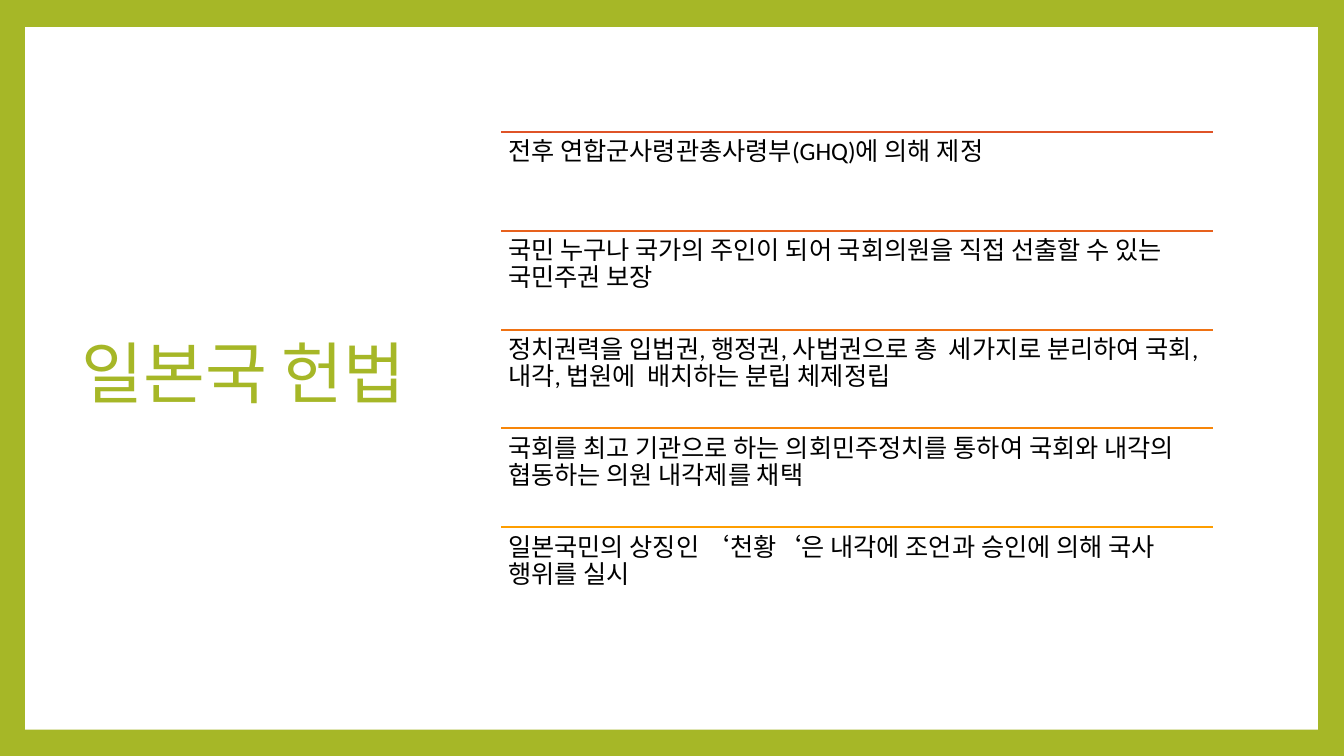
"""Build the slide on the Constitution of Japan."""
from lxml import etree
from pptx import Presentation
from pptx.dml.color import RGBColor
from pptx.enum import shapes, text
from pptx.oxml.ns import qn
from pptx.util import Inches, Pt

GREEN = RGBColor(0xA6, 0xB7, 0x27)
WHITE = RGBColor(0xFF, 0xFF, 0xFF)
BLACK = RGBColor(0x00, 0x00, 0x00)
POINTS = [
    (RGBColor(0xDF, 0x53, 0x27), "전후 연합군사령관총사령부(GHQ)에 의해 제정"),
    (RGBColor(0xE7, 0x61, 0x1D), "국민 누구나 국가의 주인이 되어 국회의원을 직접 선출할 수 있는 국민주권 보장"),
    (RGBColor(0xEF, 0x72, 0x13), "정치권력을 입법권, 행정권, 사법권으로 총  세가지로 분리하여 국회, 내각, 법원에  배치하는 분립 체제정립"),
    (RGBColor(0xF7, 0x86, 0x09), "국회를 최고 기관으로 하는 의회민주정치를 통하여 국회와 내각의 협동하는 의원 내각제를 채택"),
    (RGBColor(0xFE, 0x9E, 0x00), "일본국민의 상징인 ‘천황‘은 내각에 조언과 승인에 의해 국사 행위를 실시"),
]

prs = Presentation()
prs.slide_width, prs.slide_height = Inches(13.33), Inches(7.5)
s = prs.slides.add_slide(prs.slide_layouts[6])
s.background.fill.solid()
s.background.fill.fore_color.rgb = GREEN


def add_text(words, left, top, width, height, size, color,
             anchor=text.MSO_ANCHOR.TOP, side=0.07, edge=0.07):
    tf = s.shapes.add_textbox(Inches(left), Inches(top), Inches(width), Inches(height)).text_frame
    tf.word_wrap = True
    tf.vertical_anchor = anchor
    tf.margin_left = tf.margin_right = Inches(side)
    tf.margin_top = tf.margin_bottom = Inches(edge)
    p = tf.paragraphs[0]
    p.line_spacing = 0.9
    r = p.add_run()
    r.text = words
    r.font.name = "Calibri"
    r.font.size = Pt(size)
    r.font.color.rgb = color


panel = s.shapes.add_shape(shapes.MSO_SHAPE.RECTANGLE,
                           Inches(0.25), Inches(0.27), Inches(12.82), Inches(6.97))
panel.shadow.inherit = False
panel.fill.solid()
panel.fill.fore_color.rgb = WHITE
panel.line.fill.background()

add_text("일본국 헌법", 0.71, 0.67, 3.68, 6.13, 48, GREEN,
         anchor=text.MSO_ANCHOR.MIDDLE, side=0.1, edge=0.05)

left, first_top, width, row_height = 4.97, 1.31, 7.06, 0.98
for i, (color, words) in enumerate(POINTS):
    top = first_top + i * row_height
    rule = s.shapes.add_connector(shapes.MSO_CONNECTOR.STRAIGHT, Inches(left), Inches(top),
                                  Inches(left + width), Inches(top))
    rule.line.color.rgb = color
    rule.line.width = Pt(1.5)
    etree.SubElement(rule._element.spPr, qn("a:effectLst"))
    add_text(words, left, top, width, row_height, 18, BLACK)

prs.save("out.pptx")
